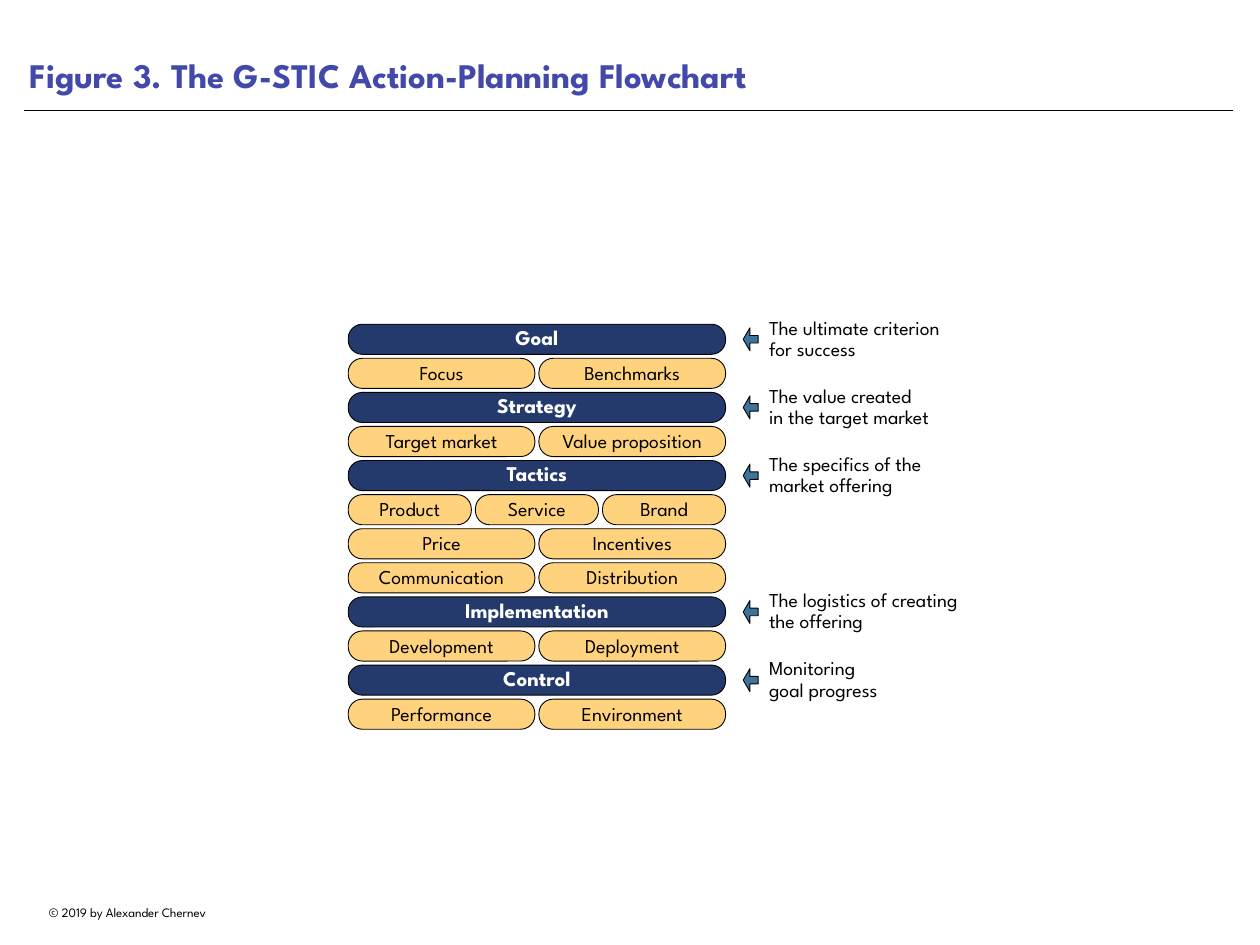
from pptx import Presentation
from pptx.dml.color import RGBColor
from pptx.enum.shapes import MSO_CONNECTOR, MSO_SHAPE
from pptx.enum.text import MSO_ANCHOR, PP_ALIGN
from pptx.oxml.ns import qn
from pptx.util import Pt
from lxml.etree import SubElement

TITLE = "Figure 3. The G-STIC Action-Planning Flowchart"
CREDIT = "© 2019 by Alexander Chernev"
STEPS = [
    ("Goal", "The ultimate criterion for success",
     [("Focus", "Benchmarks")]),
    ("Strategy", "The value created\nin the target market",
     [("Target market", "Value proposition")]),
    ("Tactics", "The specifics of the market offering",
     [("Product", "Service", "Brand"),
      ("Price", "Incentives"),
      ("Communication", "Distribution")]),
    ("Implementation", "The logistics of creating the offering",
     [("Development", "Deployment")]),
    ("Control", "Monitoring\ngoal progress",
     [("Performance", "Environment")]),
]

FONT = "League Spartan"
NAVY, GOLD, STEEL = "253A6C", "FFD37D", "3D749D"
BLACK, WHITE, VIOLET = "000000", "FFFFFF", "4349AA"
LEFT, TOP, WIDE, HIGH = 283, 263.5, 306.7, 24.5
PITCH, GAP = 27.7, 3.3
ARROW_X, ARROW_W, ARROW_H = 604, 12.2, 18.7
NOTE_X, NOTE_W, NOTE_H = 625, 161, 45.4

deck = Presentation()
deck.slide_width, deck.slide_height = Pt(1024), Pt(768)
slide = deck.slides.add_slide(deck.slide_layouts[6])


def paint(color, value):
    color.rgb = RGBColor.from_string(value)


def write(shape, text, size, color=BLACK, bold=False, align=PP_ALIGN.LEFT,
          anchor=MSO_ANCHOR.MIDDLE, space=1.0, inset=0, wrap=True):
    frame = shape.text_frame
    frame.word_wrap = wrap
    frame.vertical_anchor = anchor
    frame.margin_left = frame.margin_right = Pt(inset)
    frame.margin_top = frame.margin_bottom = Pt(inset)
    para = frame.paragraphs[0]
    para.alignment = align
    para.line_spacing = space
    for i, line in enumerate(text.split("\n")):
        if i:
            para.add_line_break()
        run = para.add_run()
        run.text = line
        run.font.name, run.font.size, run.font.bold = FONT, Pt(size), bold
        paint(run.font.color, color)


def label(x, y, w, h, text, size, **style):
    box = slide.shapes.add_textbox(Pt(x), Pt(y), Pt(w), Pt(h))
    write(box, text, size, **style)


def block(kind, x, y, w, h, fill, *adjust):
    shape = slide.shapes.add_shape(kind, Pt(x), Pt(y), Pt(w), Pt(h))
    shape.shadow.inherit = False
    shape.fill.solid()
    paint(shape.fill.fore_color, fill)
    paint(shape.line.color, BLACK)
    shape.line.width = Pt(0.75)
    for i, value in enumerate(adjust):
        shape.adjustments[i] = value
    return shape


def pills(y, names, fill, size, **style):
    w = (WIDE - GAP * (len(names) - 1)) / len(names)
    for i, name in enumerate(names):
        pill = block(MSO_SHAPE.ROUNDED_RECTANGLE, LEFT + i * (w + GAP), y,
                     w, HIGH, fill, 0.47)
        write(pill, name, size, align=PP_ALIGN.CENTER,
              anchor=MSO_ANCHOR.BOTTOM, **style)


label(19.4, 0, 982, 82.8, TITLE, 28, color=VIOLET, bold=True,
      anchor=MSO_ANCHOR.BOTTOM, inset=5)
rule = slide.shapes.add_connector(MSO_CONNECTOR.STRAIGHT,
                                  Pt(19.4), Pt(89.3), Pt(1002), Pt(89.3))
paint(rule.line.color, BLACK)
rule.line.width = Pt(0.5)
SubElement(rule._element.spPr, qn("a:effectLst"))

y = TOP
for head, note, rows in STEPS:
    mid = y + HIGH / 2
    pills(y, [head], NAVY, 17, color=WHITE, bold=True, space=0.9)
    block(MSO_SHAPE.LEFT_ARROW, ARROW_X, mid - ARROW_H / 2,
          ARROW_W, ARROW_H, STEEL, 0.33, 0.45)
    label(NOTE_X, mid - NOTE_H / 2, NOTE_W, NOTE_H, note, 16, space=0.9)
    for names in rows:
        y += PITCH
        pills(y, names, GOLD, 16, space=0.8)
    y += PITCH

label(19.4, 731.5, 168.5, 20.2, CREDIT, 10.5, align=PP_ALIGN.CENTER,
      anchor=MSO_ANCHOR.TOP, inset=3.6, wrap=False)
deck.save("out.pptx")
